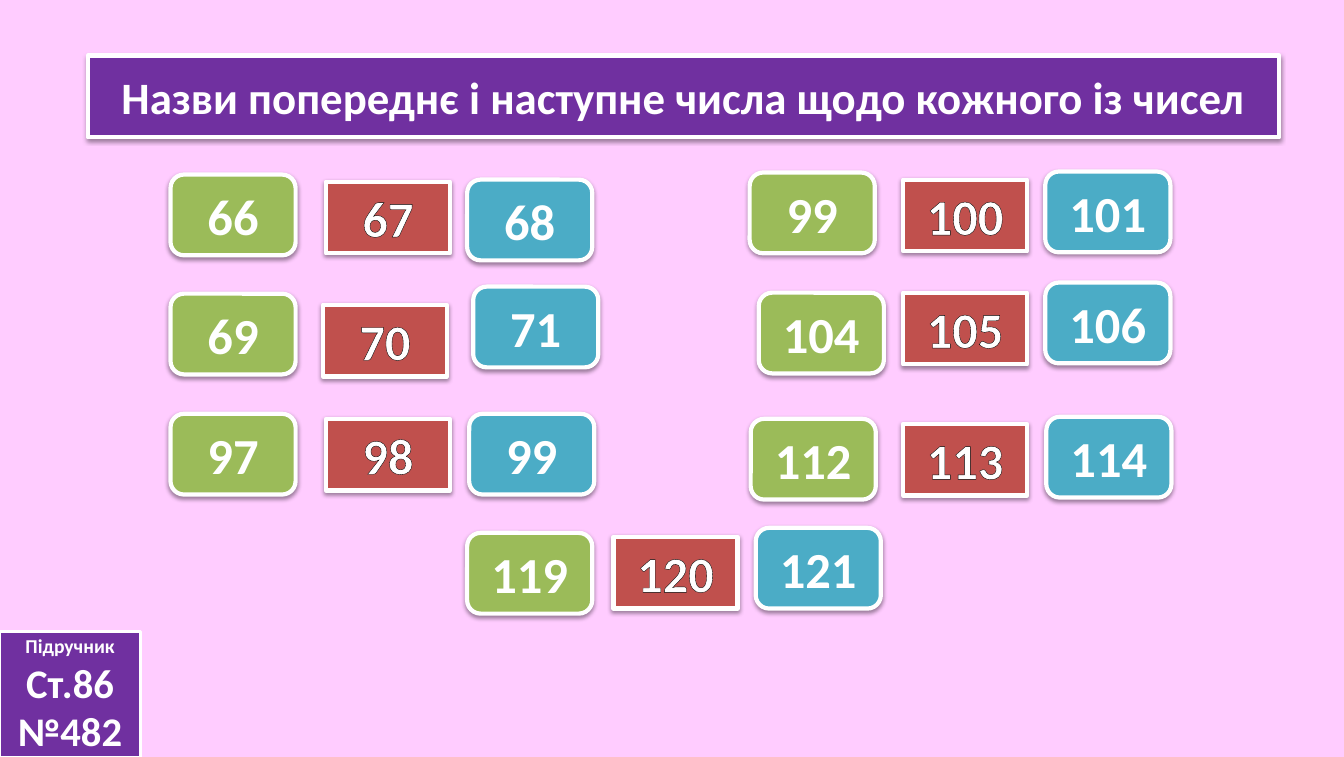
from dataclasses import dataclass

from lxml import etree
from pptx import Presentation
from pptx import util as u
from pptx.dml.color import RGBColor
from pptx.enum import shapes, text
from pptx.oxml import ns

PX = 9144


@dataclass(frozen=True)
class Theme:
    font: str = "Calibri"
    background: str = "FFCCFF"
    banner: str = "7030A0"
    previous: str = "9BBB59"
    given: str = "C0504D"
    following: str = "4BACC6"
    white: str = "FFFFFF"
    black: str = "000000"
    title_size: int = 32
    number_size: int = 36
    label_size: int = 14
    page_size: int = 29


THEME = Theme()

TRIPLES = [
    (67, (169, 173), (323, 180), (463, 178)),
    (70, (169, 291), (320, 302), (469, 284)),
    (98, (169, 410), (323, 415), (465, 410)),
    (100, (743, 171), (895, 178), (1036, 170)),
    (105, (752, 290), (895, 290), (1036, 280)),
    (113, (744, 415), (895, 420), (1037, 413)),
    (120, (463, 528), (608, 532), (749, 523)),
]


def px(n):
    return u.Emu(n * PX)


def rgb(value):
    return RGBColor.from_string(value)


def place(s, x, y, w, h):
    s.left, s.top, s.width, s.height = px(x), px(y), px(w), px(h)


def add_color(parent, value):
    return etree.SubElement(parent, ns.qn("a:srgbClr"), val=value)


def paint(s, fill, line_width=3, shadow=True):
    s.fill.solid()
    s.fill.fore_color.rgb = rgb(fill)
    s.line.color.rgb = rgb(THEME.white)
    s.line.width = u.Pt(line_width)
    s.shadow.inherit = False
    if shadow:
        effects = s._element.spPr.find(ns.qn("a:effectLst"))
        outer = etree.SubElement(effects, ns.qn("a:outerShdw"), blurRad="40000",
                                 dist="20000", dir="5400000", rotWithShape="0")
        color = add_color(outer, THEME.black)
        etree.SubElement(color, ns.qn("a:alpha"), val="38000")


def setup_text(s, anchor=text.MSO_ANCHOR.MIDDLE, fit=text.MSO_AUTO_SIZE.NONE):
    tf = s.text_frame
    tf.word_wrap = True
    tf.vertical_anchor = anchor
    tf.auto_size = fit
    return tf


def add_run(p, words, size):
    p.alignment = text.PP_ALIGN.CENTER
    r = p.add_run()
    r.text = words
    r.font.name = THEME.font
    r.font.size = u.Pt(size)
    r.font.bold = True
    r.font.color.rgb = rgb(THEME.white)
    return r


def outline_run(r):
    ln = etree.Element(ns.qn("a:ln"), w="0")
    add_color(etree.SubElement(ln, ns.qn("a:solidFill")), THEME.black)
    r.font._element.insert(0, ln)


def add_title(slide):
    s = slide.shapes.title
    place(s, 87, 55, 1181, 81)
    paint(s, THEME.banner)
    tf = setup_text(s)
    add_run(tf.paragraphs[0], "Назви попереднє і наступне числа щодо кожного із чисел",
            THEME.title_size)


def add_box(slide, kind, x, y, w, h):
    return slide.shapes.add_shape(kind, px(x), px(y), px(w), px(h))


def add_neighbour(slide, number, at, fill):
    s = add_box(slide, shapes.MSO_SHAPE.ROUNDED_RECTANGLE, *at, 124, 80)
    paint(s, fill)
    add_run(setup_text(s).paragraphs[0], str(number), THEME.number_size)


def add_given(slide, number, at):
    s = add_box(slide, shapes.MSO_SHAPE.RECTANGLE, *at, 123, 71)
    paint(s, THEME.given)
    tf = setup_text(s, text.MSO_ANCHOR.TOP, text.MSO_AUTO_SIZE.SHAPE_TO_FIT_TEXT)
    outline_run(add_run(tf.paragraphs[0], str(number), THEME.number_size))


def add_triple(slide, number, previous_at, given_at, following_at):
    add_neighbour(slide, number - 1, previous_at, THEME.previous)
    add_given(slide, number, given_at)
    add_neighbour(slide, number + 1, following_at, THEME.following)


def add_textbook_note(slide):
    s = add_box(slide, shapes.MSO_SHAPE.RECTANGLE, 0, 626, 139, 124)
    paint(s, THEME.banner, line_width=2, shadow=False)
    tf = setup_text(s)
    add_run(tf.paragraphs[0], "Підручник", THEME.label_size)
    add_run(tf.add_paragraph(), "Ст.86 №482", THEME.page_size)


def main():
    prs = Presentation()
    prs.slide_width, prs.slide_height = px(1332), px(750)
    slide = prs.slides.add_slide(prs.slide_layouts[5])
    slide.background.fill.solid()
    slide.background.fill.fore_color.rgb = rgb(THEME.background)
    add_title(slide)
    for triple in TRIPLES:
        add_triple(slide, *triple)
    add_textbook_note(slide)
    prs.save("out.pptx")


if __name__ == "__main__":
    main()
